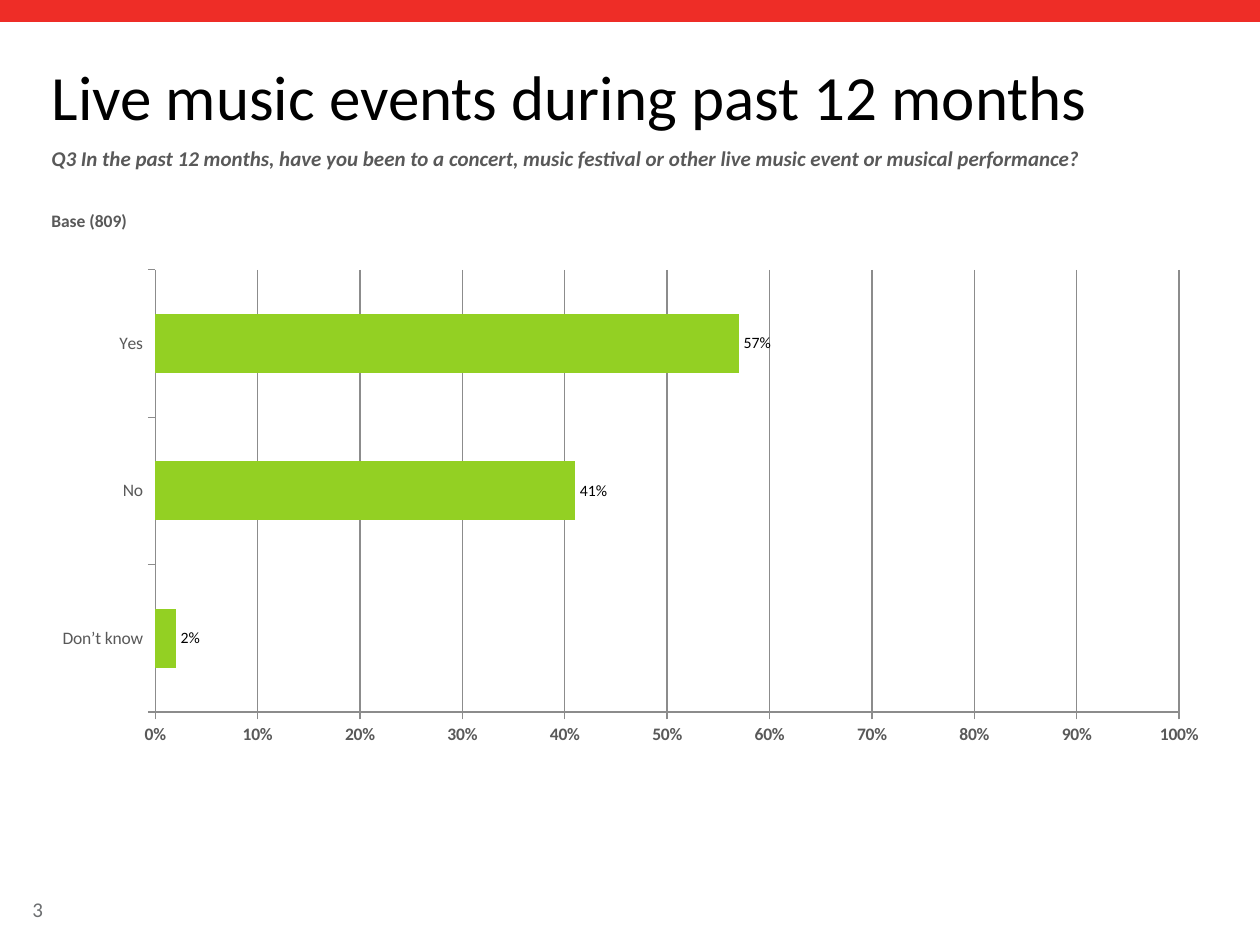
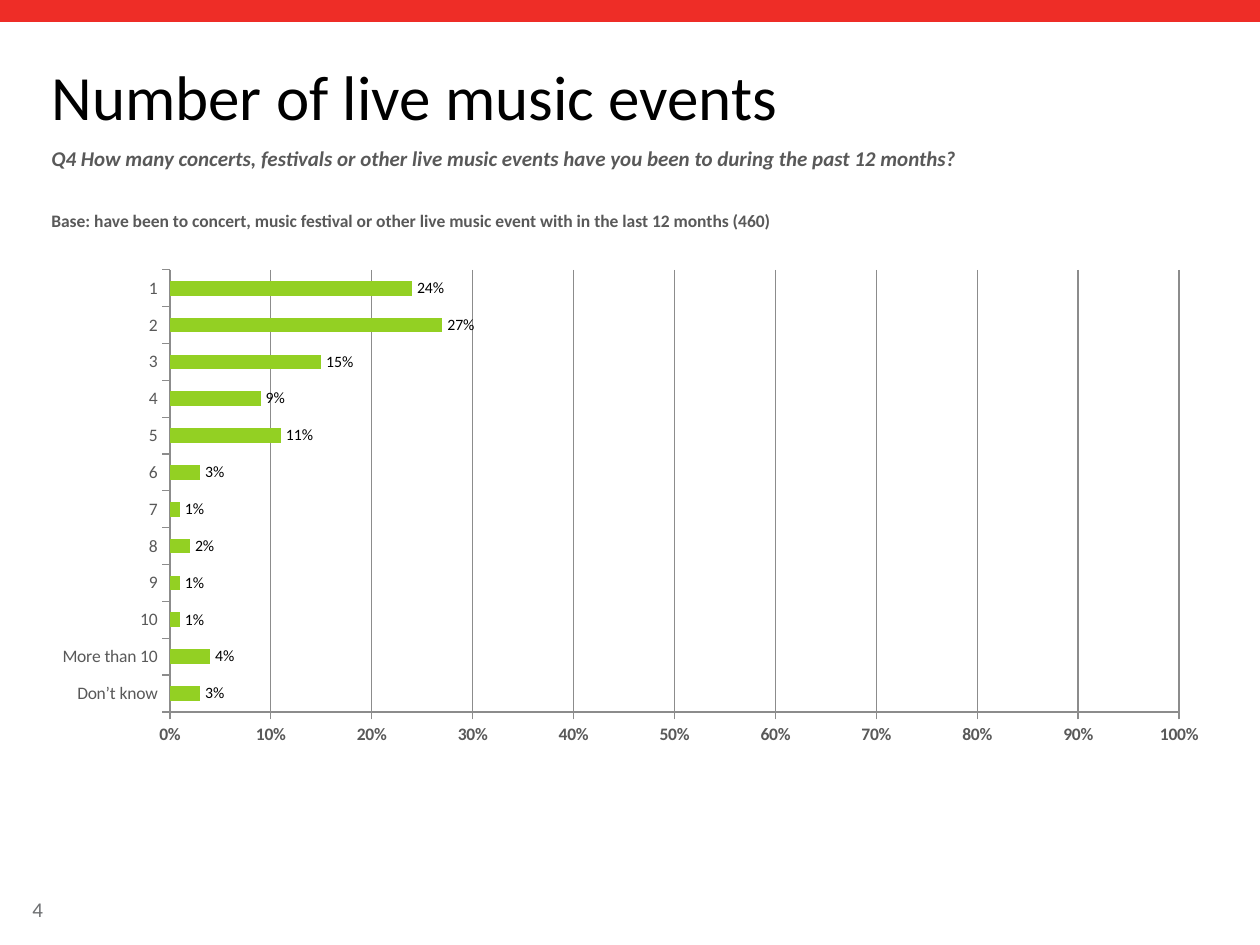
from pptx import Presentation
from pptx.chart.data import CategoryChartData
from pptx.dml.color import RGBColor
from pptx.enum.chart import XL_CHART_TYPE, XL_LABEL_POSITION, XL_TICK_LABEL_POSITION, XL_TICK_MARK
from pptx.enum.shapes import MSO_SHAPE
from pptx.enum.text import MSO_ANCHOR, MSO_AUTO_SIZE, PP_ALIGN
from pptx.util import Pt

BAR = XL_CHART_TYPE.BAR_CLUSTERED
OUTSIDE_END = XL_LABEL_POSITION.OUTSIDE_END
LOW = XL_TICK_LABEL_POSITION.LOW
TICK_OUT, TICK_NONE = XL_TICK_MARK.OUTSIDE, XL_TICK_MARK.NONE
RECT = MSO_SHAPE.RECTANGLE
TOP, MIDDLE, BOTTOM = MSO_ANCHOR.TOP, MSO_ANCHOR.MIDDLE, MSO_ANCHOR.BOTTOM
LEFT = PP_ALIGN.LEFT
NO_FIT = MSO_AUTO_SIZE.NONE

FONT = "Calibri"
COLORS = {
    "band": "EE2D27",
    "title": "000000",
    "text": "595959",
    "number": "6D6F71",
    "bar": "93D023",
    "grid": "8C8C8C",
}

SLIDES = [
    {
        "number": "3",
        "title": "Live music events during past 12 months",
        "question": "Q3 In the past 12 months, have you been to a concert, music festival "
                    "or other live music event or musical performance?",
        "base": "Base (809)",
        "answers": {"Don’t know": 0.02, "No": 0.41, "Yes": 0.57},
    },
    {
        "number": "4",
        "title": "Number of live music events",
        "question": "Q4 How many concerts, festivals or other live music events "
                    "have you been to during the past 12 months?",
        "base": "Base: have been to concert, music festival or other live music event "
                "with in the last 12 months (460)",
        "answers": {
            "Don’t know": 0.03, "More than 10": 0.04, "10": 0.01, "9": 0.01,
            "8": 0.02, "7": 0.01, "6": 0.03, "5": 0.11,
            "4": 0.09, "3": 0.15, "2": 0.27, "1": 0.24,
        },
    },
]


def px(*lengths):
    """Turn px (126 to the inch) into EMU."""
    return [round(n * 914400 / 126) for n in lengths]


def write(sp, text, box, size, color, bold=False, italic=False, anchor=TOP):
    sp.left, sp.top, sp.width, sp.height = px(*box)
    tf = sp.text_frame
    tf.word_wrap = True
    tf.auto_size = NO_FIT
    tf.vertical_anchor = anchor
    p = tf.paragraphs[0]
    p.alignment = LEFT
    r = p.add_run()
    r.text = text
    r.font.name = FONT
    r.font.size = Pt(size)
    r.font.bold = bold
    r.font.italic = italic
    r.font.color.rgb = RGBColor.from_string(COLORS[color])


prs = Presentation()
prs.slide_width, prs.slide_height = px(1260, 945)
title_only = prs.slide_layouts[5]

for page in SLIDES:
    s = prs.slides.add_slide(title_only)

    # Top band and page number
    band = s.shapes.add_shape(RECT, *px(0, 0, 1260, 22))
    band.shadow.inherit = False
    band.fill.solid()
    band.fill.fore_color.rgb = RGBColor.from_string(COLORS["band"])
    band.line.fill.background()
    write(s.shapes.add_textbox(0, 0, 0, 0), page["number"], (20, 890, 97, 38), 12, "number",
          anchor=MIDDLE)

    # Title, question and base
    write(s.shapes.title, page["title"], (39, 43, 1182, 96), 36, "title", anchor=BOTTOM)
    write(s.shapes.add_textbox(0, 0, 0, 0), page["question"], (39, 139, 1183, 64), 12, "text",
          bold=True, italic=True)
    write(s.shapes.add_textbox(0, 0, 0, 0), page["base"], (39, 204, 1183, 54), 10, "text",
          bold=True)

    # Bar chart of the answers
    data = CategoryChartData(number_format="0%")
    data.categories = page["answers"].keys()
    data.add_series("Series 1", page["answers"].values())
    chart = s.shapes.add_chart(BAR, *px(39, 260, 1183, 494), data).chart
    chart.has_title = False
    chart.has_legend = False
    chart.font.name = FONT
    chart.font.size = Pt(10)

    plot = chart.plots[0]
    plot.gap_width = 150
    plot.overlap = -10
    plot.vary_by_categories = False
    bars = plot.series[0]
    bars.format.fill.solid()
    bars.format.fill.fore_color.rgb = RGBColor.from_string(COLORS["bar"])

    plot.has_data_labels = True
    labels = plot.data_labels
    labels.show_value = True
    labels.position = OUTSIDE_END
    labels.number_format = "0%"
    labels.number_format_is_linked = False
    labels.font.name = FONT
    labels.font.size = Pt(9)
    labels.font.color.rgb = RGBColor.from_string(COLORS["title"])

    # Axes and gridlines
    val_axis = chart.value_axis
    val_axis.minimum_scale = 0
    val_axis.maximum_scale = 1
    val_axis.major_unit = 0.1
    val_axis.has_major_gridlines = True
    val_axis.tick_label_position = LOW
    val_axis.tick_labels.number_format = "0%"
    val_axis.tick_labels.number_format_is_linked = False
    for axis in (chart.category_axis, val_axis):
        axis.major_tick_mark = TICK_OUT
        axis.minor_tick_mark = TICK_NONE
        font = axis.tick_labels.font
        font.name = FONT
        font.size = Pt(10)
        font.bold = axis is val_axis
        font.color.rgb = RGBColor.from_string(COLORS["text"])
    for part in (chart.category_axis, val_axis, val_axis.major_gridlines):
        part.format.line.width = Pt(0.75)
        part.format.line.color.rgb = RGBColor.from_string(COLORS["grid"])

prs.save("out.pptx")
